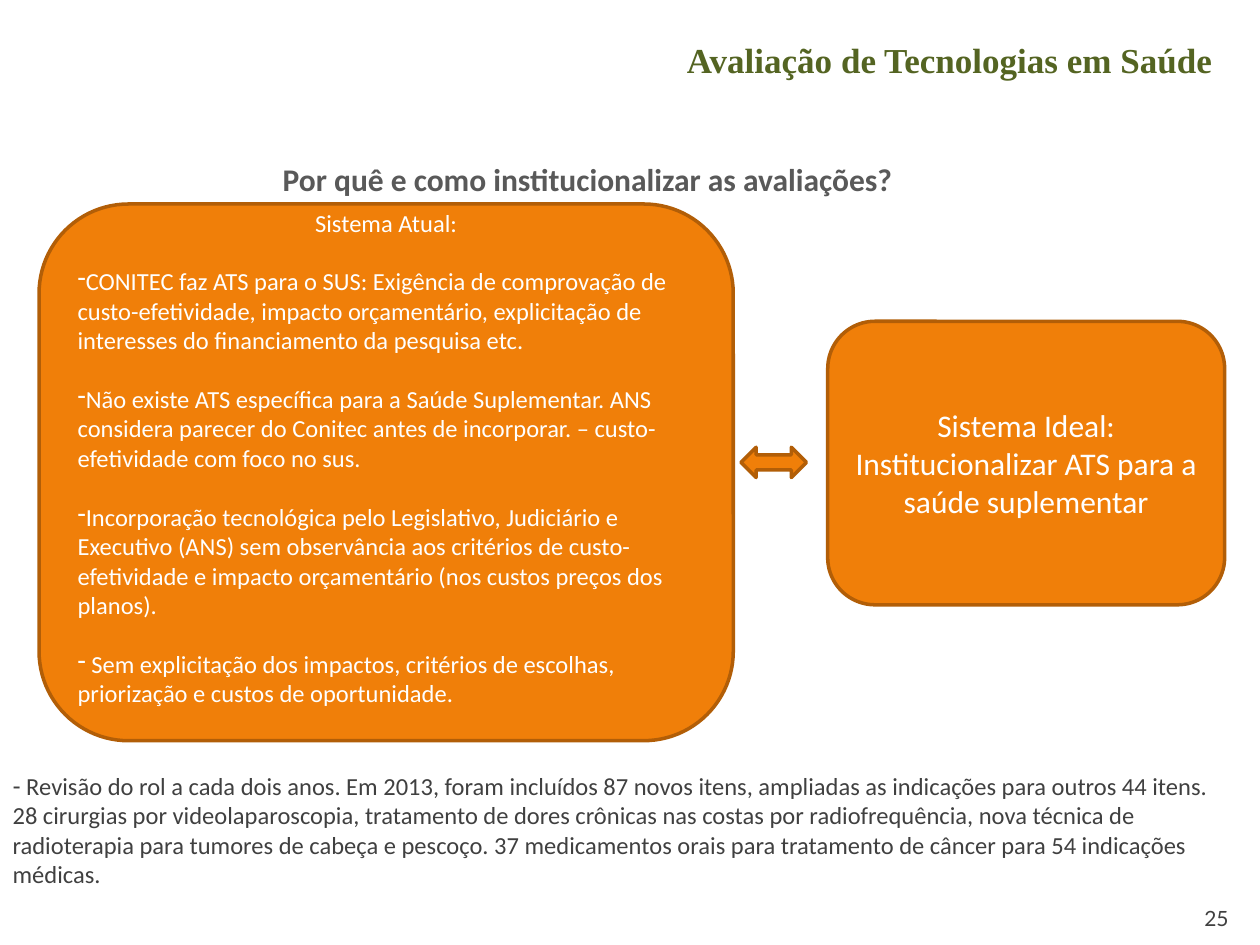
"""Build the slide on institutionalising health technology assessment."""
from lxml.etree import SubElement
from pptx import Presentation
from pptx.dml.color import RGBColor as Rgb
from pptx.enum.shapes import MSO_SHAPE as Kind
from pptx.enum.text import MSO_ANCHOR as Anchor, MSO_AUTO_SIZE as Fit, PP_ALIGN as Align
from pptx.oxml.ns import qn
from pptx.util import Pt

HUES = {"fill": "F07F09", "edge": "B25E07", "title": "546422",
        "head": "595959", "text": "404040", "white": "FFFFFF"}
NOW = [
    "CONITEC faz ATS para o SUS: Exigência de comprovação de custo-efetividade, "
    "impacto orçamentário, explicitação de interesses do financiamento da pesquisa etc.",
    "Não existe ATS específica para a Saúde Suplementar. ANS considera parecer do "
    "Conitec antes de incorporar. – custo-efetividade com foco no sus.",
    "Incorporação tecnológica pelo Legislativo, Judiciário e Executivo (ANS) sem "
    "observância aos critérios de custo-efetividade e impacto orçamentário "
    "(nos custos preços dos planos).",
    " Sem explicitação dos impactos, critérios de escolhas, priorização e custos "
    "de oportunidade.",
]
IDEAL = ["Sistema Ideal:", "Institucionalizar ATS para a saúde suplementar"]
NOTE = (" Revisão do rol a cada dois anos. Em 2013, foram incluídos 87 novos itens, "
        "ampliadas as indicações para outros 44 itens. 28 cirurgias por "
        "videolaparoscopia, tratamento de dores crônicas nas costas por "
        "radiofrequência, nova técnica de radioterapia para tumores de cabeça e "
        "pescoço. 37 medicamentos orais para tratamento de câncer para 54 "
        "indicações médicas.")


class Deck:
    """Hold the style and the current slide."""

    def __init__(self, wide, high):
        self.prs = Presentation()
        self.prs.slide_width, self.prs.slide_height = Pt(wide), Pt(high)
        self.slide = self.prs.slides.add_slide(self.prs.slide_layouts[1])

    def hue(self, name):
        return Rgb.from_string(HUES[name])

    def place(self, item, area):
        item.left, item.top, item.width, item.height = map(Pt, area)

    def fill(self, item, lines, size, hue, align=Align.LEFT, face="Calibri",
             bold=False, dash=False, gap=0, anchor=Anchor.TOP):
        frame = item.text_frame
        frame.word_wrap = True
        frame.auto_size = Fit.NONE
        frame.vertical_anchor = anchor
        start = len(frame.paragraphs) if frame.text else 0
        for num, line in enumerate(lines, start):
            para = frame.add_paragraph() if num else frame.paragraphs[0]
            para.text = line
            para.alignment = align
            para.space_before = Pt(gap if num else 0)
            if dash:
                self.dash(para)
            font = para.font
            font.name, font.size, font.bold = face, Pt(size), bold
            font.color.rgb = self.hue(hue)

    def dash(self, para):
        props = para._p.get_or_add_pPr()
        props.set("marL", "0")
        props.set("indent", "0")
        SubElement(props, qn("a:buChar"), char="-")

    def title(self, area, text, **style):
        item = self.slide.shapes.title
        self.place(item, area)
        self.fill(item, [text], **style)

    def body(self, area, lines, **style):
        item = self.slide.placeholders[1]
        self.place(item, area)
        self.fill(item, lines, dash=True, **style)

    def label(self, area, text, **style):
        item = self.slide.shapes.add_textbox(*map(Pt, area))
        self.fill(item, [text], **style)

    def shape(self, kind, area):
        item = self.slide.shapes.add_shape(kind, *map(Pt, area))
        item.shadow.inherit = False
        item.fill.solid()
        item.fill.fore_color.rgb = self.hue("fill")
        item.line.color.rgb = self.hue("edge")
        item.line.width = Pt(2)
        return item


def main():
    deck = Deck(720, 540)
    deck.title((77, 8.6, 623, 50.4), "Avaliação de Tecnologias em Saúde", size=20,
               hue="title", align=Align.RIGHT, face="Times New Roman", bold=True,
               anchor=Anchor.MIDDLE)
    deck.label((65.5, 87.8, 540.7, 29), "Por quê e como institucionalizar as avaliações?",
               size=18, hue="head", align=Align.CENTER, bold=True)

    now = deck.shape(Kind.ROUNDED_RECTANGLE, (22.3, 116.6, 396.7, 306.7))
    now.text_frame.margin_bottom = Pt(20.4)
    look = {"size": 14, "hue": "white", "anchor": Anchor.MIDDLE}
    deck.fill(now, ["Sistema Atual:"], align=Align.CENTER, **look)
    deck.fill(now, NOW, dash=True, gap=16.8, **look)

    ideal = deck.shape(Kind.ROUNDED_RECTANGLE, (473, 183.6, 226.8, 162))
    deck.fill(ideal, IDEAL, size=18, hue="white", align=Align.CENTER,
              anchor=Anchor.MIDDLE)
    deck.shape(Kind.LEFT_RIGHT_ARROW, (423.4, 255.6, 37.4, 17.3))

    deck.body((0, 437, 712, 75), [NOTE], size=14, hue="text")
    deck.label((541.4, 513.4, 167.8, 22.3), "25", size=12, hue="text",
               align=Align.RIGHT, face="Lato", anchor=Anchor.MIDDLE)
    deck.prs.save("out.pptx")


if __name__ == "__main__":
    main()
